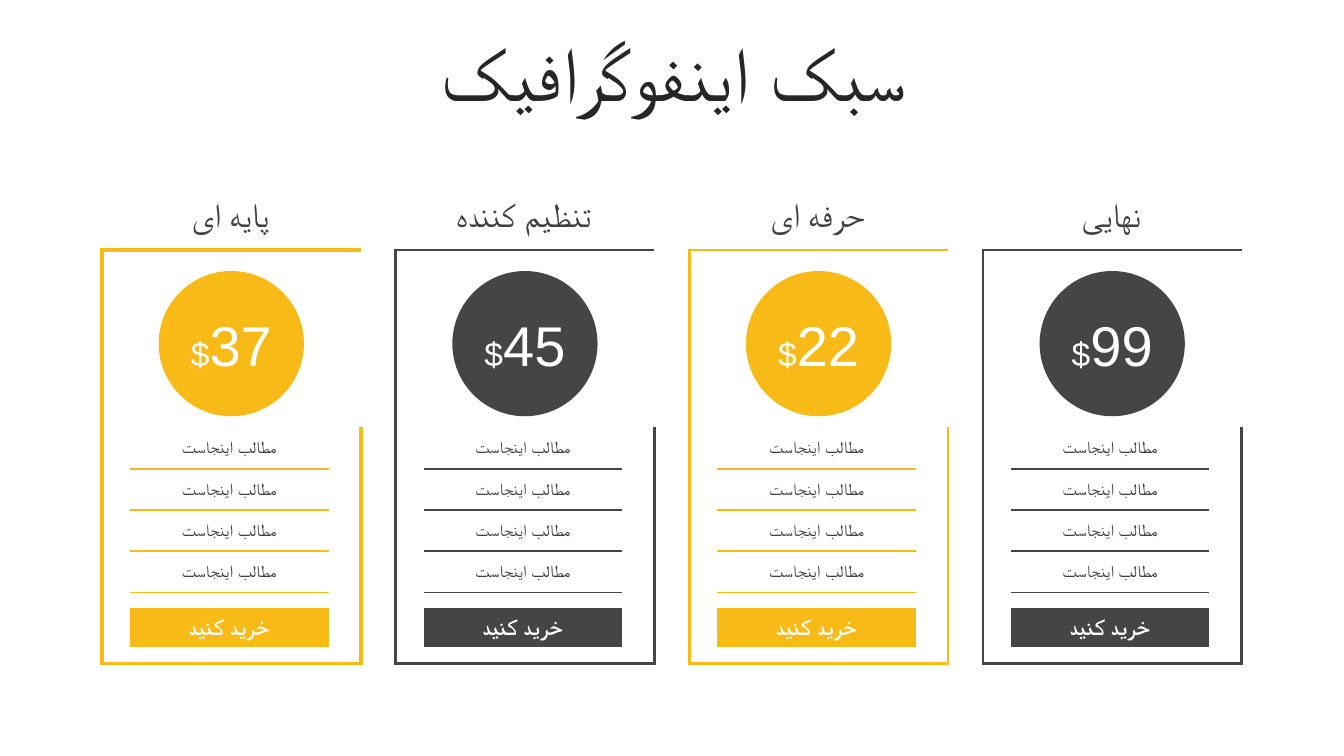
import pptx
import pptx.util
import pptx.dml.color
import pptx.enum.shapes
import pptx.enum.text
import pptx.oxml.ns
import lxml.etree

Cm = pptx.util.Cm
Pt = pptx.util.Pt
RGBColor = pptx.dml.color.RGBColor
MIDDLE = pptx.enum.text.MSO_ANCHOR.MIDDLE
qn = pptx.oxml.ns.qn

YELLOW = RGBColor(0xF8, 0xBA, 0x16)
CHARCOAL = RGBColor(0x45, 0x45, 0x45)
TEXT_GREY = RGBColor(0x40, 0x40, 0x40)
TITLE_GREY = RGBColor(0x26, 0x26, 0x26)
WHITE = RGBColor(0xFF, 0xFF, 0xFF)
NO_GRID_STYLE = "{2D5ABB26-0587-4C30-8999-92F81FD0307C}"

PLANS = [
    ("پایه ای", "37", YELLOW, 3),
    ("تنظیم کننده", "45", CHARCOAL, 2.25),
    ("حرفه ای", "22", YELLOW, 2.25),
    ("نهایی", "99", CHARCOAL, 2.25),
]
FEATURE = "مطالب اینجاست"
FEATURE_ROWS = range(1, 5)
BUTTON_ROW = 6
COLUMN_WIDTHS = [0.71, 5, 0.81]
ROW_HEIGHTS = [4.47, 1.04, 1.04, 1.04, 1.04, 0.41, 0.97, 0.41]
LAST_ROW = len(ROW_HEIGHTS) - 1
CARD_LEFT, CARD_TOP, CARD_PITCH = 2.57, 6.3, 7.4


def format_text(para, size, color, bold=False):
    para.alignment = pptx.enum.text.PP_ALIGN.CENTER
    for span in para.runs:
        span.font.size = Pt(size)
        span.font.bold = bold
        span.font.color.rgb = color
        span.font.name = "Arial"
        script_font = lxml.etree.SubElement(span.font._element, qn("a:cs"))
        script_font.set("typeface", "Arial")


def add_border(cell, side, color, width):
    line = lxml.etree.SubElement(cell._tc.get_or_add_tcPr(), qn("a:ln" + side))
    line.set("w", str(Pt(width)))
    fill = lxml.etree.SubElement(line, qn("a:solidFill"))
    lxml.etree.SubElement(fill, qn("a:srgbClr")).set("val", str(color))


deck = pptx.Presentation()
deck.slide_width = Cm(33.87)
deck.slide_height = Cm(19.05)
page = deck.slides.add_slide(deck.slide_layouts[5])

title = page.shapes.title
title.left, title.top, title.width, title.height = Cm(0.89), Cm(0.94), Cm(32.16), Cm(2)
title.text_frame.text = "سبک اینفوگرافیک"
title.text_frame.auto_size = pptx.enum.text.MSO_AUTO_SIZE.NONE
title.text_frame.vertical_anchor = MIDDLE
title_para = title.text_frame.paragraphs[0]
title_para.line_spacing = 0.9
title_para.space_before = Pt(10)
format_text(title_para, 54, TITLE_GREY)

for index, (plan, price, accent, frame_width) in enumerate(PLANS):
    left = CARD_LEFT + index * CARD_PITCH

    heading = page.shapes.add_textbox(Cm(left + 0.53), Cm(4.75), Cm(5.41), Cm(1.27))
    heading.text_frame.word_wrap = True
    heading.text_frame.margin_left = heading.text_frame.margin_right = 0
    heading.text_frame.text = plan
    format_text(heading.text_frame.paragraphs[0], 24, TEXT_GREY)

    card = page.shapes.add_table(
        len(ROW_HEIGHTS), len(COLUMN_WIDTHS), Cm(left), Cm(CARD_TOP),
        Cm(sum(COLUMN_WIDTHS)), Cm(sum(ROW_HEIGHTS)))
    card.element.find(".//" + qn("a:tableStyleId")).text = NO_GRID_STYLE
    table = card.table
    table.first_row = False
    table.horz_banding = False
    for column, width in zip(table.columns, COLUMN_WIDTHS):
        column.width = Cm(width)
    for row, height in zip(table.rows, ROW_HEIGHTS):
        row.height = Cm(height)

    for r in range(len(ROW_HEIGHTS)):
        for c in range(len(COLUMN_WIDTHS)):
            cell = table.cell(r, c)
            cell.margin_left = cell.margin_right = cell.margin_top = cell.margin_bottom = 0
            cell.vertical_anchor = MIDDLE
            para = cell.text_frame.paragraphs[0]
            if c == 1 and r in FEATURE_ROWS:
                para.text = FEATURE
                format_text(para, 12, TEXT_GREY)
            elif c == 1 and r == BUTTON_ROW:
                para.text = "خرید کنید"
                format_text(para, 16, WHITE, True)
            else:
                lxml.etree.SubElement(para._p, qn("a:endParaRPr")).set("sz", "600")

            if c == 0:
                add_border(cell, "L", accent, frame_width)
            if c == 2:
                add_border(cell, "R", accent, frame_width)
            if r == 0:
                add_border(cell, "T", accent, frame_width)
            if c == 1 and r - 1 in FEATURE_ROWS:
                add_border(cell, "T", accent, 1.5)
            if c == 1 and r in FEATURE_ROWS:
                add_border(cell, "B", accent, 1.5)
            if r == LAST_ROW:
                add_border(cell, "B", accent, frame_width)

            if c == 1 and r == BUTTON_ROW:
                cell.fill.solid()
                cell.fill.fore_color.rgb = accent
            else:
                cell.fill.background()

    table.cell(0, 0).merge(table.cell(0, 2))
    for c in (0, 2):
        table.cell(2, c).merge(table.cell(4, c))

    badge = page.shapes.add_shape(
        pptx.enum.shapes.MSO_SHAPE.OVAL, Cm(left + 1.43), Cm(6.83), Cm(3.66), Cm(3.66))
    badge.shadow.inherit = False
    badge.fill.solid()
    badge.fill.fore_color.rgb = accent
    badge.line.fill.background()
    badge.text_frame.vertical_anchor = MIDDLE
    price_para = badge.text_frame.paragraphs[0]
    price_para.text = "$"
    price_para.add_run().text = price
    format_text(price_para, 40, WHITE)
    price_para.runs[0].font.size = Pt(24)

deck.save("out.pptx")
